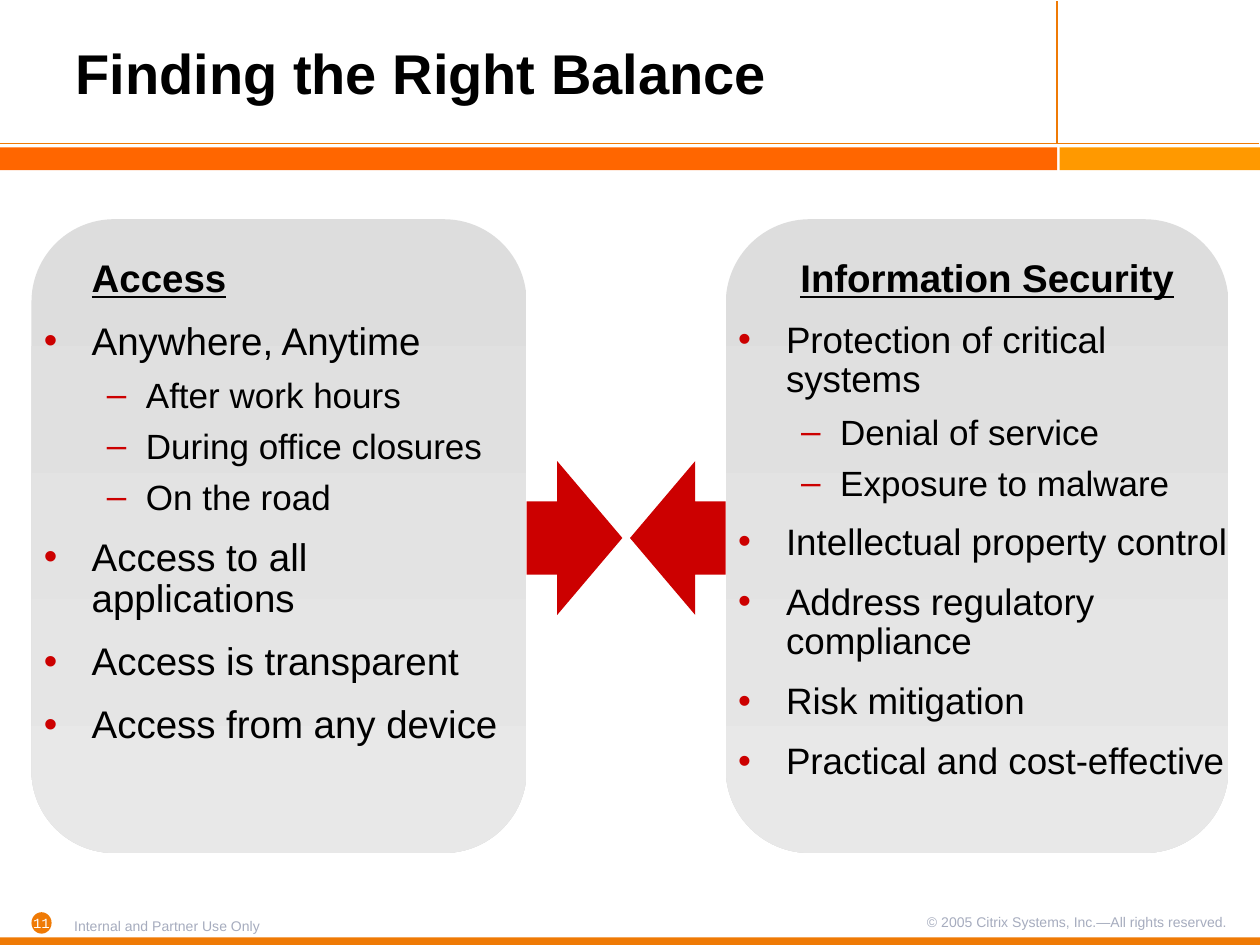
"""Build the "Finding the Right Balance" slide with two facing panels."""
from dataclasses import dataclass

from lxml.etree import SubElement
from pptx import Presentation
from pptx.dml.color import RGBColor
from pptx.enum.shapes import MSO_CONNECTOR as Connector, MSO_SHAPE as Shape
from pptx.enum.text import MSO_ANCHOR as Anchor, MSO_AUTO_SIZE as AutoSize, PP_ALIGN as Align
from pptx.oxml.ns import qn
from pptx.util import Inches, Pt

COLORS = {
    "badge": "EF7A05", "band": "FF6600", "accent": "FF9900", "red": "CC0000",
    "panel_top": "DDDDDD", "panel_bottom": "E8E8E8",
    "footer": "A6ACBE", "text": "000000", "white": "FFFFFF",
}
SPACE_FACTOR = 1.1
ARROW_TOP, ARROW_WIDTH, ARROW_HEIGHT = 3.66, 0.76, 1.22


@dataclass(frozen=True)
class Area:
    left: float
    top: float
    width: float
    height: float

    def lengths(self) -> tuple:
        return tuple(Inches(v) for v in (self.left, self.top, self.width, self.height))


@dataclass(frozen=True)
class Level:
    mark: str
    margin: float
    hanging: float
    line: float
    before: float


@dataclass(frozen=True)
class Panel:
    panel: Area
    text: Area
    heading: str
    align: Align
    heading_margin: float
    size: float
    items: tuple


@dataclass(frozen=True)
class Label:
    area: Area
    text: str
    font: str
    color: str
    align: Align
    line: float


LEVELS = (Level("•", 0.38, 0.38, 0.9, 0.35), Level("–", 0.81, 0.31, 0.85, 0.25))
SUB_SIZE = 20
AFTER = 0.15

BARS = (
    (Shape.OVAL, Area(0.25, 7.24, 0.16, 0.17), "badge"),
    (Shape.RECTANGLE, Area(0, 7.44, 10, 0.06), "badge"),
    (Shape.RECTANGLE, Area(0, 1.17, 8.39, 0.18), "band"),
    (Shape.RECTANGLE, Area(8.41, 1.17, 1.59, 0.18), "accent"),
)
RULES = ((8.39, 1.14, 8.39, 0.01), (9.99, 1.14, 0, 1.14))
LABELS = (
    Label(Area(0.11, 7.21, 0.44, 0.24), "11", "Courier New", "white", Align.CENTER, 1.0),
    Label(Area(0.49, 7.23, 2.69, 0.18), "Internal and Partner Use Only",
          "Arial", "footer", Align.LEFT, 1.0),
    Label(Area(6.77, 7.22, 3.07, 0.19), "© 2005 Citrix Systems, Inc.—All rights reserved.",
          "Arial", "footer", Align.RIGHT, 0.85),
)
PANELS = (
    Panel(Area(5.76, 1.74, 3.99, 5.03), Area(5.76, 2.01, 4.15, 5.27),
          "Information Security", Align.CENTER, 0, 21, (
              (0, "Protection of critical systems"),
              (1, "Denial of service"),
              (1, "Exposure to malware"),
              (0, "Intellectual property control"),
              (0, "Address regulatory compliance"),
              (0, "Risk mitigation"),
              (0, "Practical and cost-effective"))),
    Panel(Area(0.25, 1.74, 3.93, 5.03), Area(0.25, 2.01, 3.96, 5.07),
          "Access", Align.LEFT, 0.38, 22, (
              (0, "Anywhere, Anytime"),
              (1, "After work hours"),
              (1, "During office closures"),
              (1, "On the road"),
              (0, "Access to all applications"),
              (0, "Access is transparent"),
              (0, "Access from any device"))),
)


def color(name: str) -> RGBColor:
    return RGBColor.from_string(COLORS[name])


def style(para, size: float, font: str = "Arial", tint: str = "text", bold: bool = False) -> None:
    for span in para.runs:
        span.font.size = Pt(size)
        span.font.name = font
        span.font.bold = bold
        span.font.color.rgb = color(tint)


def add_box(page, kind: Shape, area: Area, fill: str = ""):
    box = page.shapes.add_shape(kind, *area.lengths())
    box.shadow.inherit = False
    box.line.fill.background()
    if fill:
        box.fill.solid()
        box.fill.fore_color.rgb = color(fill)
    return box


def add_rule(page, ends: tuple) -> None:
    rule = page.shapes.add_connector(Connector.STRAIGHT, *(Inches(v) for v in ends))
    rule.line.color.rgb = color("badge")
    rule.line.width = Pt(0.75)
    SubElement(rule._element.spPr, qn("a:effectLst"))


def add_text_frame(page, area: Area):
    frame = page.shapes.add_textbox(*area.lengths()).text_frame
    frame.word_wrap = True
    return frame


def add_label(page, label: Label) -> None:
    para = add_text_frame(page, label.area).paragraphs[0]
    para.text = label.text
    para.alignment = label.align
    para.line_spacing = label.line
    style(para, 8, label.font, label.color)


def set_indent(para, margin: float, hanging: float = 0):
    properties = para._p.get_or_add_pPr()
    properties.set("marL", str(Inches(margin)))
    properties.set("indent", str(-Inches(hanging)))
    return properties


def add_item(frame, depth: int, text: str, size: float) -> None:
    level = LEVELS[depth]
    para = frame.add_paragraph()
    para.text = text
    para.level = depth
    properties = set_indent(para, level.margin, level.hanging)
    tint = SubElement(properties, qn("a:buClr"))
    SubElement(tint, qn("a:srgbClr")).set("val", COLORS["red"])
    SubElement(properties, qn("a:buFont")).set("typeface", "Arial")
    SubElement(properties, qn("a:buChar")).set("char", level.mark)
    para.line_spacing = level.line
    para.space_before = Pt(round(size * level.before * SPACE_FACTOR, 1))
    para.space_after = Pt(round(size * AFTER * SPACE_FACTOR, 1))
    style(para, size)


def add_panel_text(page, panel: Panel) -> None:
    frame = add_text_frame(page, panel.text)
    heading = frame.paragraphs[0]
    heading.text = panel.heading
    heading.alignment = panel.align
    set_indent(heading, panel.heading_margin)
    heading.line_spacing = LEVELS[0].line
    heading.space_after = Pt(round(22 * AFTER * SPACE_FACTOR, 1))
    style(heading, 22, bold=True)
    heading.runs[0].font.underline = True
    for depth, text in panel.items:
        add_item(frame, depth, text, SUB_SIZE if depth else panel.size)


def add_panel(page, area: Area) -> None:
    box = add_box(page, Shape.ROUNDED_RECTANGLE, area)
    box.adjustments[0] = 0.167
    box.fill.gradient()
    box.fill.gradient_angle = 270
    for stop, name in zip(box.fill.gradient_stops, ("panel_top", "panel_bottom")):
        stop.color.rgb = color(name)


def add_arrow(page, left: float, rotation: int) -> None:
    area = Area(left, ARROW_TOP, ARROW_WIDTH, ARROW_HEIGHT)
    arrow = add_box(page, Shape.RIGHT_ARROW, area, "red")
    arrow.adjustments[0], arrow.adjustments[1] = 0.476, 0.68
    arrow.rotation = rotation


def set_title(page, text: str) -> None:
    title = page.shapes.title
    title.left, title.top, title.width, title.height = Area(0.5, 0.02, 7.87, 1.19).lengths()
    frame = title.text_frame
    frame.text = text
    frame.auto_size = AutoSize.NONE
    frame.vertical_anchor = Anchor.MIDDLE
    para = frame.paragraphs[0]
    para.alignment = Align.LEFT
    para.line_spacing = 0.85
    style(para, 32, bold=True)


def main() -> None:
    deck = Presentation()
    deck.slide_width, deck.slide_height = Inches(10), Inches(7.5)
    page = deck.slides.add_slide(deck.slide_layouts[5])
    for kind, area, fill in BARS:
        add_box(page, kind, area, fill)
    for ends in RULES:
        add_rule(page, ends)
    for label in LABELS:
        add_label(page, label)
    set_title(page, "Finding the Right Balance")
    for panel in PANELS:
        add_panel(page, panel.panel)
    for panel in reversed(PANELS):
        add_panel_text(page, panel)
    add_arrow(page, 4.18, 0)
    add_arrow(page, 5, 180)
    deck.save("out.pptx")


if __name__ == "__main__":
    main()
